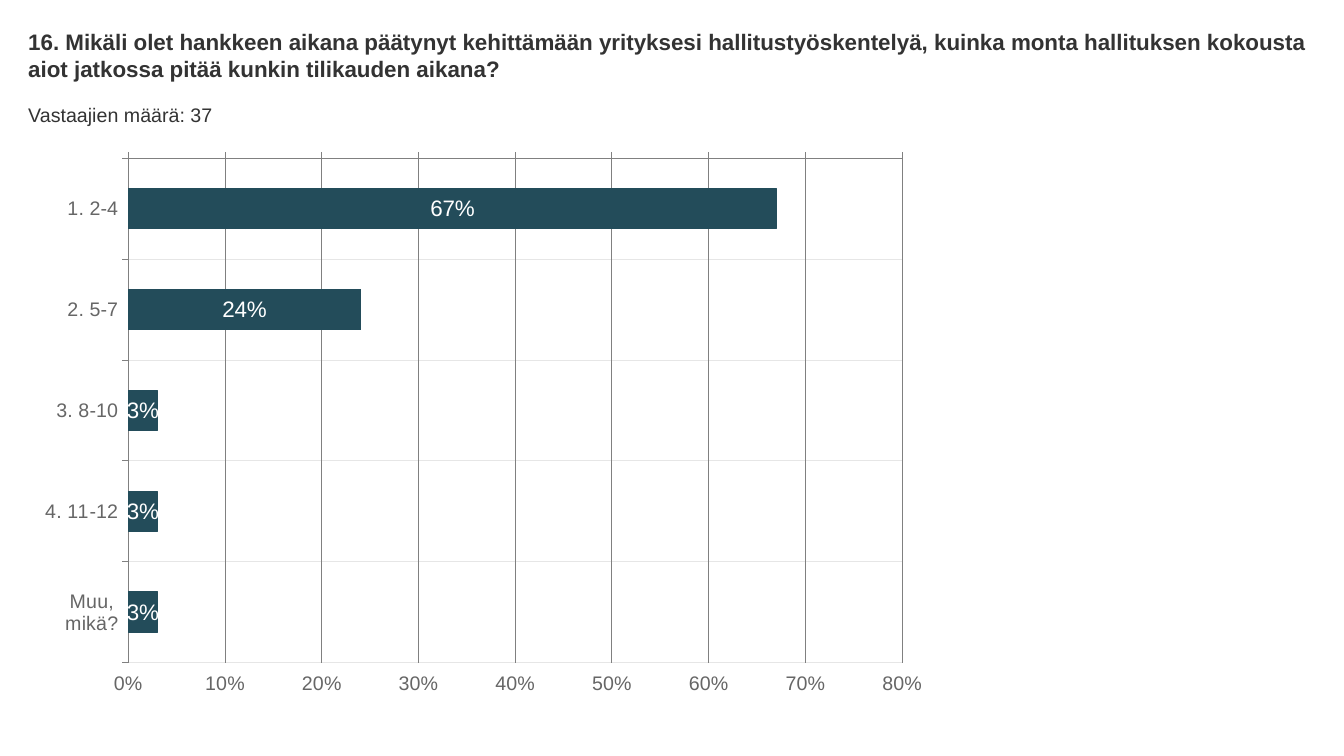
from lxml import etree
from pptx import Presentation
from pptx.chart.data import CategoryChartData
from pptx.dml.color import RGBColor
from pptx.enum import chart as ch, text as tx
from pptx.oxml.ns import qn
from pptx.util import Inches, Pt

FONT = "Arial"
TEXT = RGBColor(0x33, 0x33, 0x33)
AXIS_TEXT = RGBColor(0x66, 0x66, 0x66)
AXIS_LINE = RGBColor(0x80, 0x80, 0x80)
PALE_GRID = RGBColor(0xE6, 0xE6, 0xE6)
BAR = RGBColor(0x23, 0x4C, 0x5A)
WHITE = RGBColor(0xFF, 0xFF, 0xFF)

QUESTION = (
    "16. Mikäli olet hankkeen aikana päätynyt kehittämään yrityksesi "
    "hallitustyöskentelyä, kuinka monta hallituksen kokousta aiot jatkossa "
    "pitää kunkin tilikauden aikana?"
)
RESPONDENTS = "Vastaajien määrä: 37"
ANSWERS = {
    "1. 2-4": 0.67,
    "2. 5-7": 0.24,
    "3. 8-10": 0.03,
    "4. 11-12": 0.03,
    "Muu, mikä?": 0.03,
}
LEFT, TEXT_WIDTH = Inches(0.28), Inches(12.78)


def style_font(font, size, color, bold=False):
    font.name, font.size, font.bold = FONT, Pt(size), bold
    font.color.rgb = color


def write_text(shape, top, height, content, size, bold=False):
    """Place a text shape at the left margin and fill it with one run."""
    shape.left, shape.top = LEFT, top
    shape.width, shape.height = TEXT_WIDTH, height
    frame = shape.text_frame
    frame.margin_left = frame.margin_right = 0
    frame.margin_top = frame.margin_bottom = 0
    frame.word_wrap = True
    frame.auto_size = tx.MSO_AUTO_SIZE.NONE
    frame.vertical_anchor = tx.MSO_ANCHOR.TOP
    paragraph = frame.paragraphs[0]
    paragraph.alignment = tx.PP_ALIGN.LEFT
    run = paragraph.add_run()
    run.text = content
    style_font(run.font, size, TEXT, bold)


def style_axis(axis, grid_color, label_position):
    axis.has_major_gridlines = True
    for line in (axis.format.line, axis.major_gridlines.format.line):
        line.width = Pt(0.75)
    axis.format.line.color.rgb = AXIS_LINE
    axis.major_gridlines.format.line.color.rgb = grid_color
    axis.major_tick_mark = ch.XL_TICK_MARK.OUTSIDE
    axis.minor_tick_mark = ch.XL_TICK_MARK.NONE
    axis.tick_label_position = label_position
    style_font(axis.tick_labels.font, 14, AXIS_TEXT)


def fix_plot_area(chart, **fractions):
    """Set the inner plot area as fractions of the chart frame."""
    area = chart._chartSpace.find(".//" + qn("c:plotArea"))
    for automatic in area.findall(qn("c:layout")):
        area.remove(automatic)
    layout = etree.Element(qn("c:layout"))
    area.insert(0, layout)
    manual = etree.SubElement(layout, qn("c:manualLayout"))
    settings = {"layoutTarget": "inner", "xMode": "edge", "yMode": "edge", **fractions}
    for tag, value in settings.items():
        etree.SubElement(manual, qn("c:" + tag)).set("val", str(value))


def add_answer_chart(slide):
    data = CategoryChartData(number_format="0%")
    data.categories = list(ANSWERS)
    data.add_series("Series 1", list(ANSWERS.values()))
    chart = slide.shapes.add_chart(
        ch.XL_CHART_TYPE.BAR_CLUSTERED,
        LEFT, Inches(1.46), Inches(9.03), Inches(5.56), data,
    ).chart
    chart.has_legend = chart.has_title = False
    style_font(chart.font, 14, AXIS_TEXT)

    style_axis(chart.category_axis, PALE_GRID, ch.XL_TICK_LABEL_POSITION.LOW)
    chart.category_axis.reverse_order = True
    # The reversed categories put the value axis on top; its labels stay below.
    percent = chart.value_axis
    style_axis(percent, AXIS_LINE, ch.XL_TICK_LABEL_POSITION.HIGH)
    percent.minimum_scale, percent.maximum_scale = 0, 0.8
    percent.major_unit = 0.1
    percent.tick_labels.number_format = "0%"
    percent.tick_labels.number_format_is_linked = False

    plot = chart.plots[0]
    plot.vary_by_categories = False
    plot.gap_width = 150
    bars = plot.series[0].format
    bars.fill.solid()
    bars.fill.fore_color.rgb = bars.line.color.rgb = BAR
    bars.line.width = Pt(0.75)
    plot.has_data_labels = True
    labels = plot.data_labels
    labels.show_value = True
    labels.number_format = "0%"
    labels.number_format_is_linked = False
    labels.position = ch.XL_LABEL_POSITION.CENTER
    style_font(labels.font, 16, WHITE)
    fix_plot_area(chart, x=0.11, y=0.02, w=0.85, h=0.9)


def main():
    deck = Presentation()
    deck.slide_width, deck.slide_height = Inches(13.33), Inches(7.5)
    slide = deck.slides.add_slide(deck.slide_layouts.get_by_name("Title Only"))
    write_text(slide.shapes.title, Inches(0.28), Inches(0.53), QUESTION, 16, bold=True)
    count = slide.shapes.add_textbox(LEFT, Inches(1.02), TEXT_WIDTH, Inches(0.23))
    write_text(count, Inches(1.02), Inches(0.23), RESPONDENTS, 14)
    add_answer_chart(slide)
    deck.save("out.pptx")


if __name__ == "__main__":
    main()
